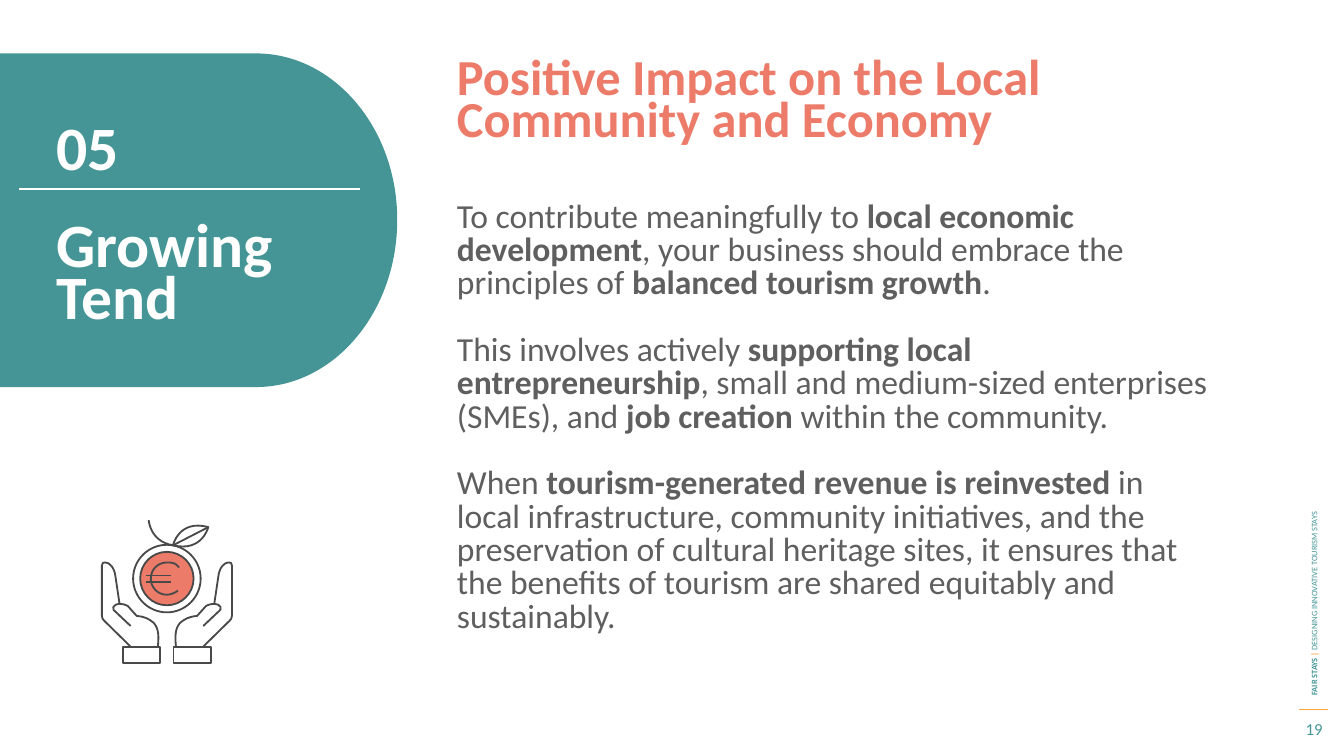
import dataclasses
import pptx
import pptx.util
import pptx.dml.color
import pptx.enum.text
import pptx.enum.shapes
import pptx.oxml
import pptx.oxml.ns


@dataclasses.dataclass(frozen=True)
class Theme:
    """Colours, font and type sizes of the slide."""
    font: str = "Calibri"
    teal: str = "459597"
    coral: str = "EC7C69"
    orange: str = "FBA63D"
    grey: str = "5F5F5F"
    ink: str = "494949"
    white: str = "FFFFFF"
    panel: int = 44
    title: int = 36
    body: int = 24
    page: int = 12
    footer: int = 6
    stroke: float = 1.3


T = Theme()
WIDTH, HEIGHT = pptx.util.Inches(13.33), pptx.util.Inches(7.5)
CELL = WIDTH / 1333
ICON_ORIGIN = (12.42, 68.8)
COIN_ROW = 58

HAND = [(35.5, 126), (62, 100), (63.5, 99, 64.5, 97, 64.5, 95), (64.5, 45),
        (64.5, 43, 63, 41, 61, 42), (57, 42, 52, 47, 51, 56), (47, 83),
        (44, 83, 41, 84, 39, 85), (30, 95), (21, 96, 18, 98, 13, 102),
        (8, 108, 8, 115, 9, 126)]
THUMB = [(47, 83), (49, 83, 50, 84, 51, 84), (53, 85, 54, 87, 53, 89), (36, 105)]
CUFF = [(6.5, 126), (43.5, 126), (43.5, 142), (6.5, 142), (6.5, 126)]
STEM = [(-18, 0), (-18, 0, -17, 21, 6, 25)]
LEAF = [(6, 25), (6, 25, 12, -1, 41, 7), (41, 7, 35, 32, 6, 25)]
VEIN = [(41, 7), (6, 25)]
EURO = [(11, 70), (8, 72, 4, 74, 0, 74), (-9, 74, -16, 67, -16, 58),
        (-16, 49, -9, 42, 0, 42), (9, 42, 9, 44, 12, 47)]
EURO_BARS = [[(-21, y), (4, y)] for y in (55, 61)]
PANEL = [(0, 53), (254, 53), (331, 53, 394, 127, 394, 218),
         (394, 310, 331, 384, 254, 384), (0, 384), (0, 53)]

BODY = [
    [("To contribute meaningfully to ", False),
     ("local economic development", True),
     (", your business should embrace the principles of ", False),
     ("balanced tourism growth", True), (".", False)],
    [("This involves actively ", False),
     ("supporting local entrepreneurship", True),
     (", small and medium-sized enterprises (SMEs), and ", False),
     ("job creation ", True), ("within the community.", False)],
    [("When ", False), ("tourism-generated revenue is reinvested ", True),
     ("in local infrastructure, community initiatives, and the preservation of "
      "cultural heritage sites, it ensures that the benefits of tourism are "
      "shared equitably and sustainably.", False)],
]


def across(share):
    """Turn a percentage of the slide width into a length."""
    return round(WIDTH * share / 100)


def down(share):
    """Turn a percentage of the slide height into a length."""
    return round(HEIGHT * share / 100)


def rgb(code):
    """Turn a hex code into a colour."""
    return pptx.dml.color.RGBColor.from_string(code)


def paint(s, fill=None, line=None):
    """Set fill and outline of a shape and drop its shadow."""
    s.shadow.inherit = False
    for part, colour in ((s.fill, fill), (s.line.fill, line)):
        if colour:
            part.solid()
            part.fore_color.rgb = rgb(colour)
        else:
            part.background()
    if line:
        s.line.width = pptx.util.Pt(T.stroke)


def bend(outline, steps):
    """Join each curve's three line segments into one cubic curve."""
    segments = iter(outline.findall(pptx.oxml.ns.qn("a:lnTo")))
    for step in steps[1:]:
        first = next(segments)
        if len(step) == 6:
            first.tag = pptx.oxml.ns.qn("a:cubicBezTo")
            for _ in range(2):
                segment = next(segments)
                first.append(segment[0])
                outline.remove(segment)


def add_outline(shapes, steps, origin=(0, 0), mirror=1, fill=None, line=None):
    """Draw a path of corners and cubic curves given in grid cells."""
    left, top = across(origin[0]), down(origin[1])
    points = [(round(left + mirror * step[k] * CELL), round(top + step[k + 1] * CELL))
              for step in steps for k in range(0, len(step), 2)]
    builder = shapes.build_freeform(*points[0])
    builder.add_line_segments(points[1:], close=steps[0] == steps[-1][-2:])
    s = builder.convert_to_shape()
    outline = s._element.spPr.find(".//" + pptx.oxml.ns.qn("a:path"))
    bend(outline, steps)
    if not s.height:
        s.height = round(2 * CELL)
        outline.set("h", str(s.height))
    paint(s, fill, line)


def add_rule(slide, left, right, top, colour, width):
    """Draw a horizontal line."""
    s = slide.shapes.add_connector(pptx.enum.shapes.MSO_CONNECTOR.STRAIGHT,
                                   across(left), down(top), across(right), down(top))
    s.line.color.rgb = rgb(colour)
    s.line.width = pptx.util.Pt(width)
    effects = '<a:effectLst xmlns:a="http://schemas.openxmlformats.org/drawingml/2006/main"/>'
    s._element.spPr.append(pptx.oxml.parse_xml(effects))


def add_text(slide, box, paragraphs, size, colour, rotation=0, anchor="TOP", **layout):
    """Add a text box whose runs are (text, bold) or (text, bold, colour)."""
    left, top, width, height = box
    s = slide.shapes.add_textbox(across(left), down(top), across(width), down(height))
    s.rotation = rotation
    tf = s.text_frame
    tf.word_wrap = True
    tf.vertical_anchor = pptx.enum.text.MSO_ANCHOR[anchor]
    for i, runs in enumerate(paragraphs):
        p = tf.paragraphs[0] if i == 0 else tf.add_paragraph()
        for name, value in layout.items():
            if i or name != "space_before":
                setattr(p, name, value)
        for text, bold, *tint in runs:
            r = p.add_run()
            r.text = text
            values = {"name": T.font, "size": pptx.util.Pt(size), "bold": bold}
            for name, value in values.items():
                setattr(r.font, name, value)
            r.font.color.rgb = rgb(tint[0] if tint else colour)


def circle(radius):
    """Return the four curves of a circle around the coin's centre."""
    r, c, y = radius, round(radius * 0.55, 2), COIN_ROW
    return [(r, y), (r, y + c, c, y + r, 0, y + r), (-c, y + r, -r, y + c, -r, y),
            (-r, y - c, -c, y - r, 0, y - r), (c, y - r, r, y - c, r, y)]


def add_icon(slide):
    """Draw two hands holding a coin with a leaf."""
    shapes = slide.shapes.add_group_shape().shapes
    for mirror in (1, -1):
        for steps in (HAND, CUFF, THUMB):
            add_outline(shapes, steps, ICON_ORIGIN, mirror, line=T.ink)
    for radius, fill in ((33.5, None), (26.5, T.coral)):
        add_outline(shapes, circle(radius), ICON_ORIGIN, fill=fill, line=T.ink)
    for steps in (STEM, LEAF, VEIN, EURO, *EURO_BARS):
        add_outline(shapes, steps, ICON_ORIGIN, line=T.ink)


def main():
    """Build the slide and save it."""
    prs = pptx.Presentation()
    prs.slide_width, prs.slide_height = WIDTH, HEIGHT
    slide = prs.slides.add_slide(prs.slide_layouts[6])
    pt = pptx.util.Pt

    add_rule(slide, 96.67, 98.84, 93.87, T.orange, 0.75)
    add_text(slide, (76.12, 53.5, 43.29, 2.67),
             [[("FAIR STAYS ", True), ("| ", True, T.orange),
               ("DESIGNING INNOVATIVE TOURISM STAYS", False)]],
             T.footer, T.teal, rotation=270, anchor="MIDDLE")
    add_outline(slide.shapes, PANEL, fill=T.teal)
    add_rule(slide, 1.43, 26.78, 25.03, T.white, 1.75)
    add_text(slide, (3.47, 29.45, 20.26, 15.33), [[("Growing Tend", True)]],
             T.panel, T.white, line_spacing=pt(37.4))
    add_text(slide, (3.45, 13.73, 9.83, 5.6), [[("05", True)]], T.panel, T.white)
    add_text(slide, (33.26, 7.87, 54.91, 11.73),
             [[("Positive Impact on the Local Community and Economy", True)]],
             T.title, T.coral, line_spacing=pt(29.6))
    add_text(slide, (33.26, 26, 57.69, 55.07), BODY, T.body, T.grey,
             line_spacing=pt(23.8), space_before=pt(23.8))
    add_text(slide, (95.83, 94.13, 3.9, 4.53), [[("19", False)]], T.page, T.teal,
             anchor="MIDDLE", alignment=pptx.enum.text.PP_ALIGN.CENTER)
    add_icon(slide)
    prs.save("out.pptx")


if __name__ == "__main__":
    main()
